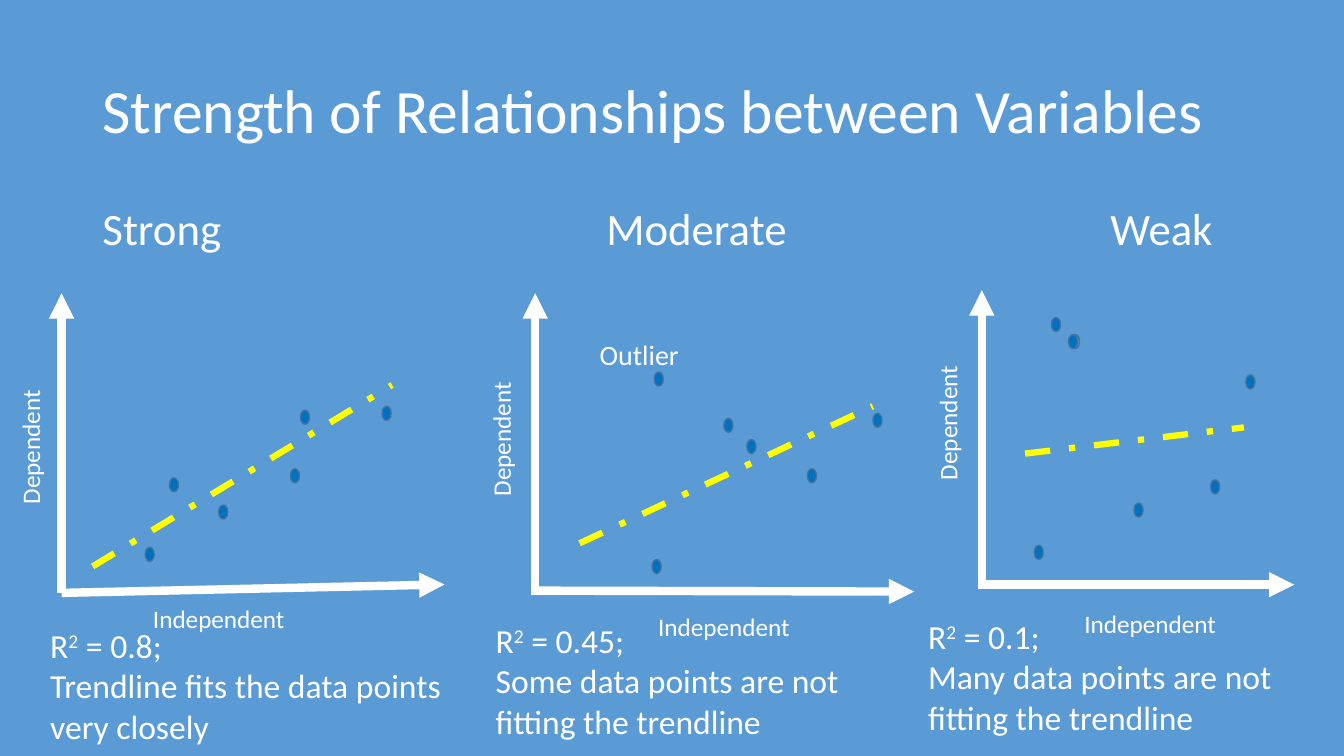
from pptx import Presentation
from pptx import util as u
from pptx.dml import color
from pptx.enum import dml, shapes, text
from pptx.oxml import ns
from lxml import etree

BACK, WHITE, BLUE, EDGE, GOLD = "5B9BD5", "FFFFFF", "0070C0", "43739E", "FFFF00"
DOT = (6.5, 10.1)
LABEL = (121, 29)


def tint(fmt, code):
    if hasattr(fmt, "solid"):
        fmt.solid()
        fmt = fmt.fore_color
    fmt.rgb = color.RGBColor.from_string(code)


def node(top, tag, **keys):
    return etree.SubElement(top, ns.qn(tag), **keys)


def place(shape, box):
    shape.left, shape.top, shape.width, shape.height = map(u.Pt, box)


def write(shape, lines, size=18, wrap=True, anchor="TOP", space=1.0, before=0):
    frame = shape.text_frame
    frame.word_wrap = wrap
    frame.auto_size = text.MSO_AUTO_SIZE.NONE
    frame.vertical_anchor = getattr(text.MSO_ANCHOR, anchor)
    for i, line in enumerate(lines):
        para = frame.add_paragraph() if i else frame.paragraphs[0]
        para.alignment = text.PP_ALIGN.LEFT
        para.line_spacing = space
        para.space_before = u.Pt(before)
        for j, part in enumerate(line.split("^")):
            run = para.add_run()
            run.text = part
            run.font.size = u.Pt(size)
            run.font.name = "Calibri"
            tint(run.font.color, WHITE)
            if j == 1:
                run._r.get_or_add_rPr().set("baseline", "30000")


def label(slide, box, lines, turn=0, **style):
    shape = slide.shapes.add_textbox(*map(u.Pt, box))
    shape.rotation = turn
    write(shape, lines, **style)


def stroke(slide, start, end, code, width, arrow=False):
    line = slide.shapes.add_connector(shapes.MSO_CONNECTOR.STRAIGHT, *map(u.Pt, (*start, *end)))
    tint(line.line.fill, code)
    line.line.width = u.Pt(width)
    if arrow:
        node(line.line._get_or_add_ln(), "a:tailEnd", type="triangle")
    else:
        line.line.dash_style = dml.MSO_LINE.DASH_DOT
    node(line._element.spPr, "a:effectLst")


def dot(slide, x, y, code=BLUE):
    shape = slide.shapes.add_shape(shapes.MSO_SHAPE.OVAL, *map(u.Pt, (x, y, *DOT)))
    shape.shadow.inherit = False
    tint(shape.fill, code)
    tint(shape.line.fill, EDGE)
    shape.line.width = u.Pt(1)


def head(slide, box):
    left, top, wide, high = box
    title, body = slide.placeholders
    place(title, (left, top, wide, high))
    write(title, ["Strength of Relationships between Variables"], size=44, anchor="MIDDLE", space=0.9)
    row, step = top + 115, 360
    style = dict(size=32, space=0.9, before=10)
    place(body, (left, row, 180, 49))
    write(body, ["Strong"], **style)
    props = body.text_frame.paragraphs[0]._p.get_or_add_pPr()
    props.set("marL", "0")
    props.set("indent", "0")
    node(props, "a:buNone")
    for i, name in enumerate(["Moderate", "Weak"], 1):
        label(slide, (left + i * step, row, 160, 49), [name], **style)


def panel(slide, box, base, trend, dots, note, foot, side, lines, extra=None):
    left, top, wide, high = box

    def at(spot):
        return left + spot[0], top + spot[1]

    stroke(slide, at(base[0]), at((wide, base[1])), WHITE, 6, arrow=True)
    stroke(slide, at((0, high)), at((0, 0)), WHITE, 6, arrow=True)
    stroke(slide, at(trend[0]), at(trend[1]), GOLD, 4.5)
    for x, y, *code in dots:
        dot(slide, *at((x, y)), *code)
    label(slide, (*at(note[:2]), note[2], 94.3), lines, size=24)
    label(slide, (*at(foot), *LABEL), ["Independent"])
    label(slide, (*at(side), *LABEL), ["Dependent"], turn=270)
    if extra:
        label(slide, (*at(extra[:2]), 72, 32), [extra[2]], size=20, wrap=False)


PANELS = [
    dict(box=(44, 209.5, 273.5, 214), base=((0, 214), 208),
         trend=((22.2, 195.1), (236.1, 65.5)),
         dots=[(170.6, 83.5), (163.4, 125.3), (112.2, 151.2),
               (77, 131.8), (228.9, 80.7), (59.7, 181.5)],
         note=(-15.2, 233.3, 300.2), foot=(58.2, 218.2), side=(-82.9, 82.8),
         lines=["R^2^ = 0.8;", "Trendline fits the data points very closely"]),
    dict(box=(382.3, 209.5, 270.7, 214), base=((-2.9, 212.4), 213.1),
         trend=((31.7, 178.6), (241.2, 80.7)),
         dots=[(83.5, 190.1), (151.2, 104.4), (241.2, 85.7),
               (194.4, 125.3), (134.7, 89.3), (85, 56.2)],
         note=(-35.3, 229.7, 283), foot=(80.7, 223.9), side=(-84.9, 77.1),
         lines=["R^2^ = 0.45;", "Some data points are not fitting the trendline"],
         extra=(38.9, 28.1, "Outlier")),
    dict(box=(701.3, 207.4, 223.2, 213), base=((0, 210.2), 210.2),
         trend=((30.9, 116.6), (187.2, 97.9)),
         dots=[(37.4, 182.1), (49.7, 19.4), (63.3, 31.6, BACK), (61.9, 31.6),
               (108.7, 151.9), (188.6, 60.4), (163.4, 135.3)],
         note=(-45.4, 228.9, 304.6), foot=(66.2, 223.9), side=(-85, 67.6),
         lines=["R^2^ = 0.1;", "Many data points are not fitting the trendline"]),
]


def main():
    deck = Presentation()
    deck.slide_width, deck.slide_height = u.Pt(960), u.Pt(540)
    slide = deck.slides.add_slide(deck.slide_layouts[1])
    tint(slide.background.fill, BACK)
    head(slide, (66, 29, 828, 104.4))
    for part in PANELS:
        panel(slide, **part)
    deck.save("out.pptx")


if __name__ == "__main__":
    main()
